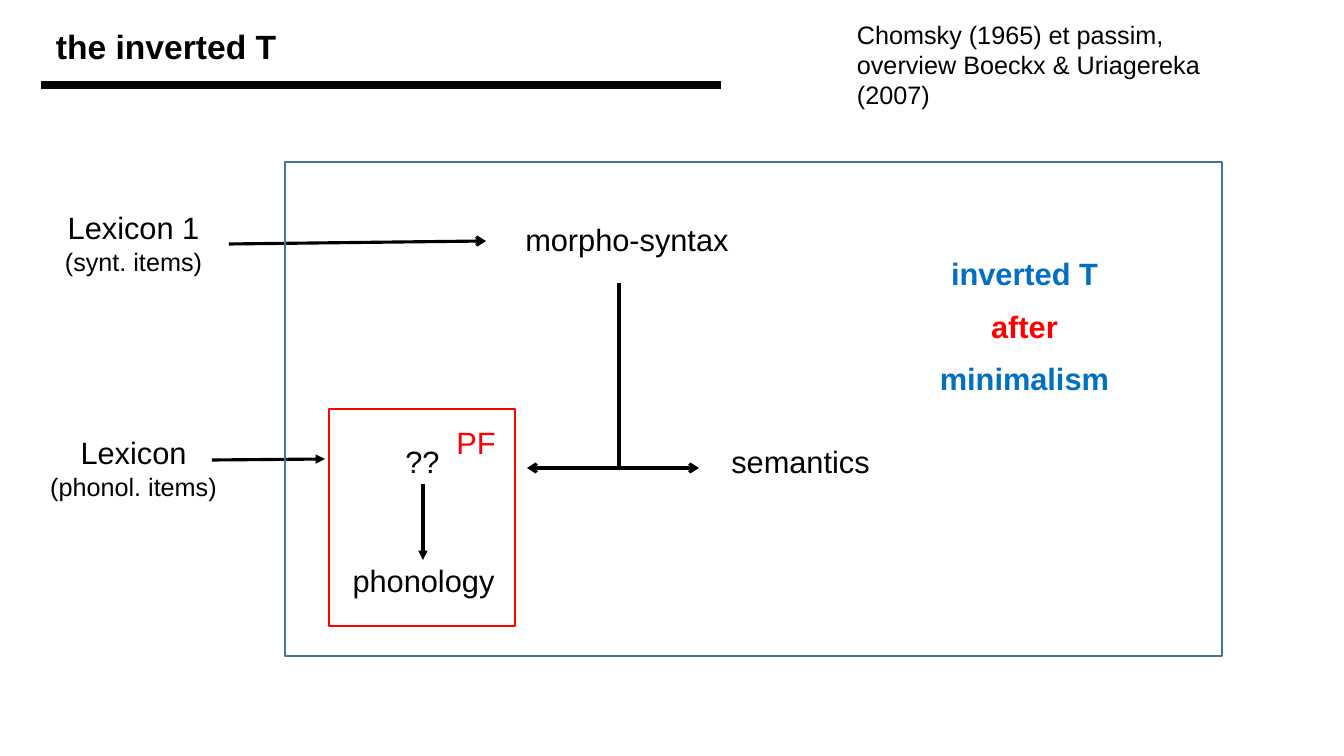
from lxml import etree
from pptx import Presentation, util as u
from pptx.dml.color import RGBColor
from pptx.enum import shapes, text
from pptx.oxml.ns import qn

PX = 914400 / 100.8
COLORS = {"ink": "000000", "frame": "43739E", "blue": "0070C0", "red": "FF0000"}


def px(*lengths):
    return [u.Emu(round(n * PX)) for n in lengths]


def rgb(name):
    return RGBColor.from_string(COLORS[name])


class Diagram:
    font = "Arial"
    body, small = 22, 18

    def __init__(self, slide):
        self.s = slide

    def text(self, box, *lines, align="CENTER", gap=0):
        """Each line is a string or a (string, format dict) pair."""
        tf = self.s.shapes.add_textbox(*px(*box)).text_frame
        tf.word_wrap = True
        for i, line in enumerate(lines):
            words, fmt = (line, {}) if isinstance(line, str) else line
            fmt = {"name": self.font, "size": self.body, "color": "ink", **fmt}
            p = tf.paragraphs[0] if i == 0 else tf.add_paragraph()
            p.alignment = text.PP_ALIGN[align]
            if i:
                p.space_before = u.Pt(gap)
            r = p.add_run()
            r.text = words
            r.font.color.rgb = rgb(fmt.pop("color"))
            fmt["size"] = u.Pt(fmt["size"])
            for key, value in fmt.items():
                setattr(r.font, key, value)

    def line(self, start, end, width=2.25, head=None, tail=None):
        sp = self.s.shapes.add_connector(
            shapes.MSO_CONNECTOR.STRAIGHT, *px(*start, *end))
        sp.line.color.rgb = rgb("ink")
        sp.line.width = u.Pt(width)
        ln = sp.line._get_or_add_ln()
        for tag, kind in (("a:headEnd", head), ("a:tailEnd", tail)):
            if kind:
                etree.SubElement(ln, qn(tag), type=kind)
        etree.SubElement(sp._element.spPr, qn("a:effectLst"))

    def frame(self, box, color):
        sp = self.s.shapes.add_shape(shapes.MSO_SHAPE.RECTANGLE, *px(*box))
        sp.shadow.inherit = False
        sp.fill.background()
        sp.line.color.rgb = rgb(color)
        sp.line.width = u.Pt(2)


def main():
    prs = Presentation()
    prs.slide_width, prs.slide_height = px(1344, 756)
    d = Diagram(prs.slides.add_slide(prs.slide_layouts[6]))
    small = {"size": d.small}

    d.text((46, 21, 842, 50), ("the inverted T", {"size": 24, "bold": True}),
           align="LEFT")
    d.line((41, 85), (721, 85), width=6)
    d.text((847, 14, 420, 102),
           ("Chomsky (1965) et passim, overview Boeckx & Uriagereka (2007)", small),
           align="LEFT")

    for top, lexicon, items in ((204, "Lexicon 1", "(synt. items)"),
                                (429, "Lexicon", "(phonol. items)")):
        d.text((32, top, 203, 78), lexicon, (items, small))
    for left, top, width, module in ((329, 216, 596, "morpho-syntax"),
                                     (321, 438, 203, "??"),
                                     (699, 438, 203, "semantics"),
                                     (322, 557, 203, "phonology")):
        d.text((left, top, width, 47), module)

    d.line((229, 244), (486, 241), tail="arrow")
    d.line((619, 283), (619, 468))
    d.line((527, 468), (699, 468), head="arrow", tail="arrow")
    d.line((212, 460), (325, 459), tail="triangle")
    d.line((423, 484), (423, 560), tail="triangle")

    d.frame((285, 162, 937, 494), "frame")
    d.text((874, 250, 301, 159),
           *((word, {"color": color, "bold": True}) for word, color in
             (("inverted T", "blue"), ("after", "red"), ("minimalism", "blue"))),
           gap=11)
    d.frame((329, 409, 186, 217), "red")
    d.text((428, 419, 96, 47), ("PF", {"color": "red"}))

    prs.save("out.pptx")


if __name__ == "__main__":
    main()
